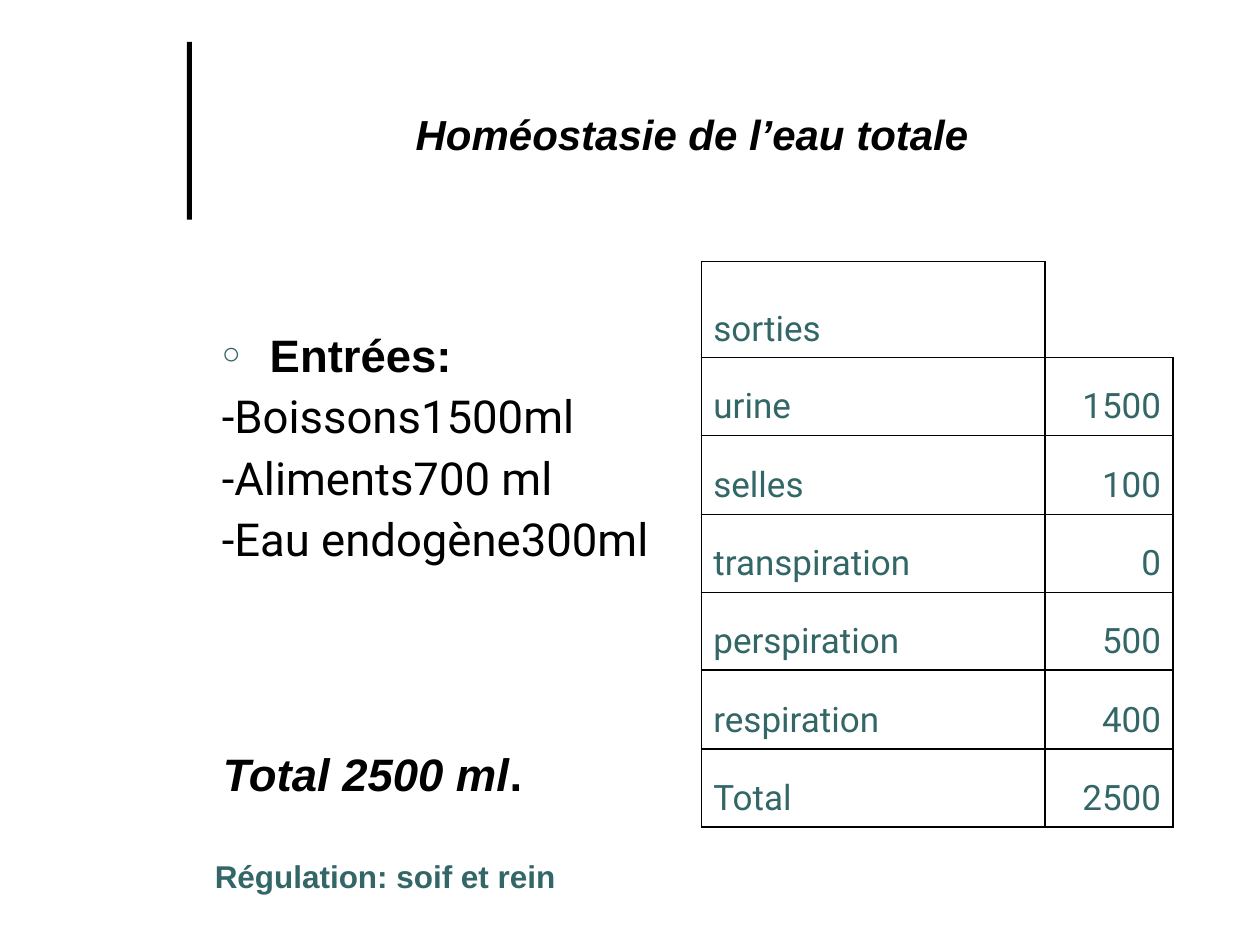
from lxml import etree
from pptx import Presentation
from pptx.dml.color import RGBColor
from pptx.enum.shapes import MSO_SHAPE
from pptx.enum.text import MSO_ANCHOR, PP_ALIGN
from pptx.oxml.ns import qn
from pptx.util import Emu, Pt

RECTANGLE = MSO_SHAPE.RECTANGLE
TOP, BOTTOM = MSO_ANCHOR.TOP, MSO_ANCHOR.BOTTOM
LEFT, RIGHT = PP_ALIGN.LEFT, PP_ALIGN.RIGHT
EMU_PER_PX = 914400 / 126
BLACK, TEAL = "000000", "336666"
HEADING = {"name": "Arial", "size": Pt(26), "bold": True}
HEADING_ITALIC = {**HEADING, "italic": True}
TITLE = {**HEADING_ITALIC, "size": Pt(24)}
BODY = {"name": "Roboto", "size": Pt(26)}
CELL = {"name": "Roboto", "size": Pt(20)}
NOTE = {"name": "Arial", "size": Pt(18), "bold": True}
OUTPUTS = [
    ("sorties", ""), ("urine", "1500"), ("selles", "100"), ("transpiration", "0"),
    ("perspiration", "500"), ("respiration", "400"), ("Total", "2500"),
]


def px(value):
    return Emu(round(value * EMU_PER_PX))


def color(value):
    return RGBColor.from_string(value)


def child(parent, tag, **attributes):
    return etree.SubElement(parent, qn(tag), attributes)


class SlideBuilder:
    def __init__(self, slide, bullet_indent=48, cell_margin=12):
        self.slide = slide
        self.bullet_indent = bullet_indent
        self.cell_margin = cell_margin

    def bar(self, left, top, width, height, fill):
        shape = self.slide.shapes.add_shape(RECTANGLE, px(left), px(top), px(width), px(height))
        shape.shadow.inherit = False
        shape.fill.solid()
        shape.fill.fore_color.rgb = color(fill)
        shape.line.fill.background()

    def run(self, paragraph, text, style, text_color):
        run = paragraph.add_run()
        run.text = text
        for name, value in style.items():
            setattr(run.font, name, value)
        run.font.color.rgb = color(text_color)

    def bullet(self, paragraph):
        properties = paragraph._p.get_or_add_pPr()
        indent = px(self.bullet_indent)
        properties.set("marL", str(indent))
        properties.set("indent", str(-indent))
        child(child(properties, "a:buClr"), "a:srgbClr", val=TEAL)
        child(properties, "a:buSzPct", val="69000")
        child(properties, "a:buFont", typeface="Arial")
        child(properties, "a:buChar", char="○")

    def text(self, left, top, width, height, paragraphs, text_color=BLACK, bulleted=False):
        shape = self.slide.shapes.add_textbox(px(left), px(top), px(width), px(height))
        frame = shape.text_frame
        frame.word_wrap = True
        frame.vertical_anchor = TOP
        frame.margin_left = frame.margin_top = frame.margin_right = frame.margin_bottom = 0
        for index, runs in enumerate(paragraphs):
            paragraph = frame.add_paragraph() if index else frame.paragraphs[0]
            if index:
                paragraph.space_before = Pt(4)
            elif bulleted:
                self.bullet(paragraph)
            for text, style in runs:
                self.run(paragraph, text, style, text_color)

    def borders(self, cell, visible):
        properties = cell._tc.get_or_add_tcPr()
        for side in "LRTB":
            line = child(properties, f"a:ln{side}", w=str(Pt(1)))
            if side in visible:
                child(child(line, "a:solidFill"), "a:srgbClr", val=BLACK)
            else:
                child(line, "a:noFill")

    def table(self, left, top, widths, heights, rows):
        shape = self.slide.shapes.add_table(
            len(rows), len(widths), px(left), px(top), px(sum(widths)), px(sum(heights)))
        table = shape.table
        table.first_row = table.horz_banding = False
        for column, width in zip(table.columns, widths):
            column.width = px(width)
        for row, height, values in zip(table.rows, heights, rows):
            row.height = px(height)
            for cell, value, alignment in zip(row.cells, values, (LEFT, RIGHT)):
                self.borders(cell, "LRTB" if value else "LB")
                cell.fill.background()
                cell.vertical_anchor = BOTTOM
                cell.margin_left = cell.margin_right = px(self.cell_margin)
                cell.margin_top, cell.margin_bottom = 0, px(8)
                paragraph = cell.text_frame.paragraphs[0]
                paragraph.alignment = alignment
                if value:
                    self.run(paragraph, value, CELL, TEAL)


def main():
    presentation = Presentation()
    presentation.slide_width, presentation.slide_height = px(1261), px(946)
    builder = SlideBuilder(presentation.slides.add_slide(presentation.slide_layouts[6]))
    builder.bar(187, 42, 5, 178, BLACK)
    builder.text(416, 109, 740, 50, [[("Homéostasie de l’eau totale", TITLE)]])
    builder.text(222, 327, 440, 240, [
        [("Entrées:", HEADING)],
        [("-Boissons1500ml", BODY)],
        [("-Aliments700 ml", BODY)],
        [("-Eau endogène300ml", BODY)],
    ], bulleted=True)
    builder.text(223, 747, 340, 54, [[("Total 2500 ml", HEADING_ITALIC), (".", HEADING)]])
    builder.text(215, 858, 380, 38, [[("Régulation: soif et rein", NOTE)]], TEAL)
    edges = [262] + [round(358 + 470 * step / 6) for step in range(7)]
    heights = [bottom - top for top, bottom in zip(edges, edges[1:])]
    builder.table(702, 262, [344, 128], heights, OUTPUTS)
    presentation.save("out.pptx")


if __name__ == "__main__":
    main()
